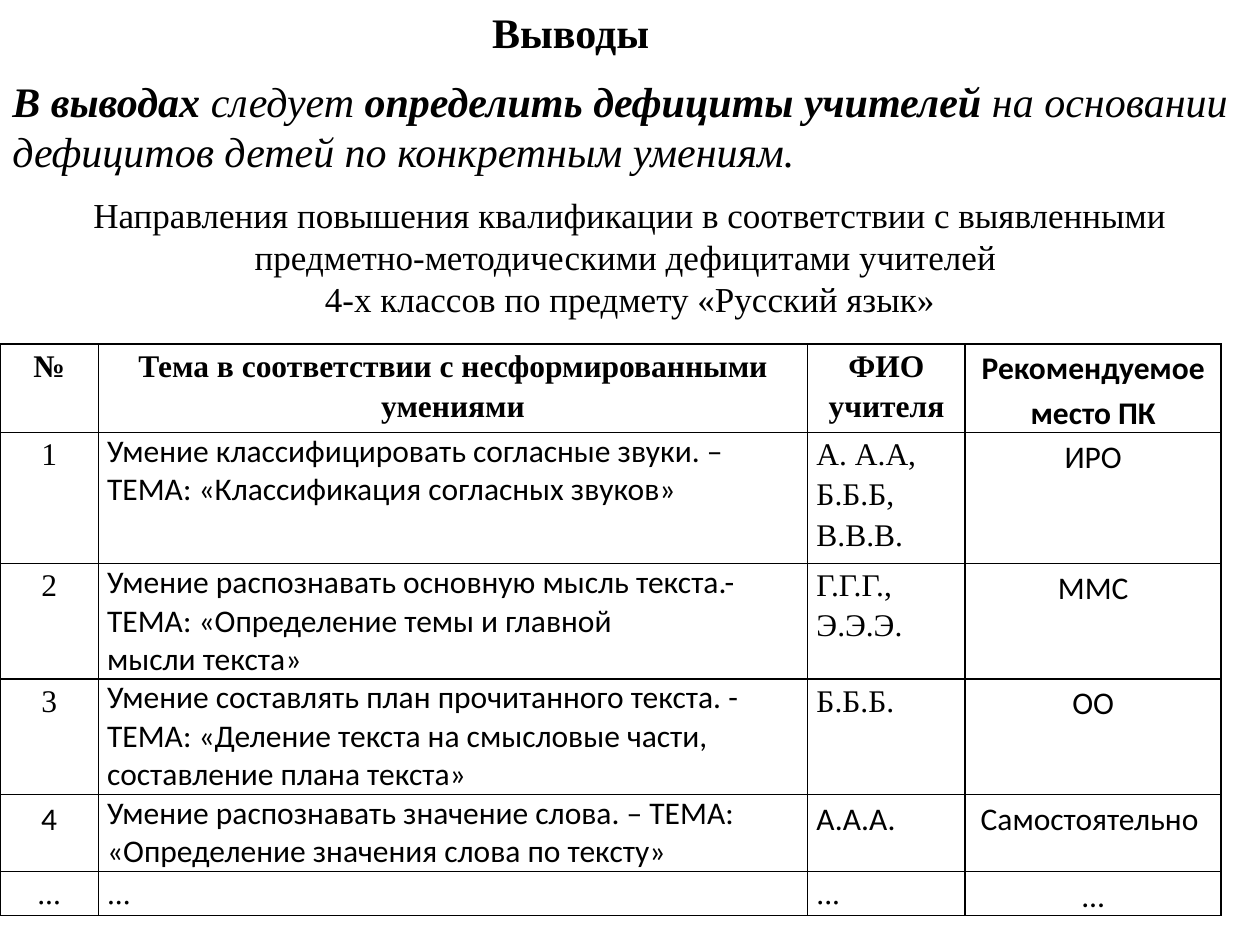
from lxml import etree
from pptx import Presentation
from pptx import util as u
from pptx.dml.color import RGBColor
from pptx.enum import text
from pptx.oxml import ns

BLACK = RGBColor(0x00, 0x00, 0x00)
SERIF, SANS = "Times New Roman", "Calibri"
CENTER, LEFT = text.PP_ALIGN.CENTER, text.PP_ALIGN.LEFT

COLUMN_WIDTHS = [56.2, 405.4, 90, 146.2]
ROW_HEIGHTS = [49.7, 74.9, 64.8, 64.8, 43.2, 25.2]
ROWS = [
    ["№", "Тема в соответствии с несформированными умениями", "ФИО учителя", "Рекомендуемое место ПК"],
    ["1", "Умение классифицировать согласные звуки. – ТЕМА: «Классификация согласных звуков»",
     "А. А.А,\nБ.Б.Б,\nВ.В.В.", "ИРО"],
    ["2", "Умение распознавать основную мысль текста.- ТЕМА: «Определение темы и главной\nмысли текста»",
     "Г.Г.Г.,\nЭ.Э.Э.", "ММС"],
    ["3", "Умение составлять план прочитанного текста. - ТЕМА: «Деление текста на смысловые части, "
     "составление плана текста»", "Б.Б.Б.", "ОО"],
    ["4", "Умение распознавать значение слова. – ТЕМА: «Определение значения слова по тексту»",
     "А.А.А.", "Самостоятельно "],
    ["...", "...", "...", "…"],
]


def add_run(paragraph, wording, size, face=SERIF, bold=False, italic=False):
    """Append one formatted run to a paragraph."""
    run = paragraph.add_run()
    run.text = wording
    font = run.font
    font.name, font.size, font.bold, font.italic = face, u.Pt(size), bold, italic
    font.color.rgb = BLACK


def fill_frame(frame, paragraphs, size, align, anchor):
    """Write paragraphs given as lists of (wording, bold, italic) runs."""
    frame.word_wrap = True
    frame.auto_size = text.MSO_AUTO_SIZE.NONE
    frame.vertical_anchor = anchor
    for index, runs in enumerate(paragraphs):
        paragraph = frame.add_paragraph() if index else frame.paragraphs[0]
        paragraph.alignment = align
        for wording, bold, italic in runs:
            add_run(paragraph, wording, size, bold=bold, italic=italic)


def add_heading(slide):
    """Place the slide heading in the title placeholder."""
    heading = slide.shapes.title
    heading.left, heading.top, heading.width, heading.height = map(u.Pt, (180, 0, 292.3, 36.7))
    fill_frame(heading.text_frame, [[("Выводы", True, False)]], 24, CENTER, text.MSO_ANCHOR.MIDDLE)


def add_full_width_text(slide, top, height, paragraphs, size, align, anchor):
    """Add a text box that spans the slide."""
    box = slide.shapes.add_textbox(0, u.Pt(top), u.Pt(720), u.Pt(height))
    fill_frame(box.text_frame, paragraphs, size, align, anchor)


def add_borders(cell):
    """Draw a thin black line on every side of a cell."""
    properties = cell._tc.get_or_add_tcPr()
    for side in ("lnL", "lnR", "lnT", "lnB"):
        line = etree.SubElement(properties, ns.qn("a:" + side), w=str(u.Pt(1)))
        fill = etree.SubElement(line, ns.qn("a:solidFill"))
        etree.SubElement(fill, ns.qn("a:srgbClr"), val=str(BLACK))


def cell_face(row, column):
    """Return the typeface used at a table position."""
    topic = column == 1 and 1 <= row <= 4
    return SANS if column == 3 or row == 4 or topic else SERIF


def fill_cell(cell, row, column, wording):
    """Format one table cell and write its lines."""
    add_borders(cell)
    cell.fill.background()
    cell.margin_left = cell.margin_right = u.Pt(5)
    cell.margin_top = cell.margin_bottom = 0
    for index, line in enumerate(wording.split("\n")):
        paragraph = cell.text_frame.add_paragraph() if index else cell.text_frame.paragraphs[0]
        paragraph.alignment = CENTER if row == 0 or column in (0, 3) else LEFT
        paragraph.line_spacing = 1.0 if column == 1 and 1 <= row <= 4 else 1.15
        add_run(paragraph, line, 18, cell_face(row, column), bold=row == 0)


def add_training_table(slide):
    """Add the table of topics, teachers and training places."""
    frame = slide.shapes.add_table(len(ROWS), len(COLUMN_WIDTHS), 0, u.Pt(196.6),
                                   u.Pt(sum(COLUMN_WIDTHS)), u.Pt(sum(ROW_HEIGHTS)))
    training = frame.table
    training.horz_banding = False
    for column, width in zip(training.columns, COLUMN_WIDTHS):
        column.width = u.Pt(width)
    for row, height in zip(training.rows, ROW_HEIGHTS):
        row.height = u.Pt(height)
    for row, wordings in enumerate(ROWS):
        for column, wording in enumerate(wordings):
            fill_cell(training.cell(row, column), row, column, wording)


def main():
    """Build the conclusions slide."""
    deck = Presentation()
    deck.slide_width, deck.slide_height = u.Pt(720), u.Pt(540)
    slide = deck.slides.add_slide(deck.slide_layouts[5])
    add_heading(slide)
    advice = [[("В выводах ", True, True), ("следует ", False, True),
               ("определить дефициты учителей ", True, True),
               ("на основании дефицитов детей по конкретным умениям.", False, True)]]
    add_full_width_text(slide, 39.6, 65.5, advice, 24, LEFT, text.MSO_ANCHOR.TOP)
    directions = [[("Направления повышения квалификации в соответствии с выявленными "
                    "предметно-методическими дефицитами учителей ", False, False)],
                  [("4-х классов по предмету «Русский язык»", False, False)]]
    add_full_width_text(slide, 106.6, 79.9, directions, 20, CENTER, text.MSO_ANCHOR.MIDDLE)
    add_training_table(slide)
    deck.save("out.pptx")


if __name__ == "__main__":
    main()
